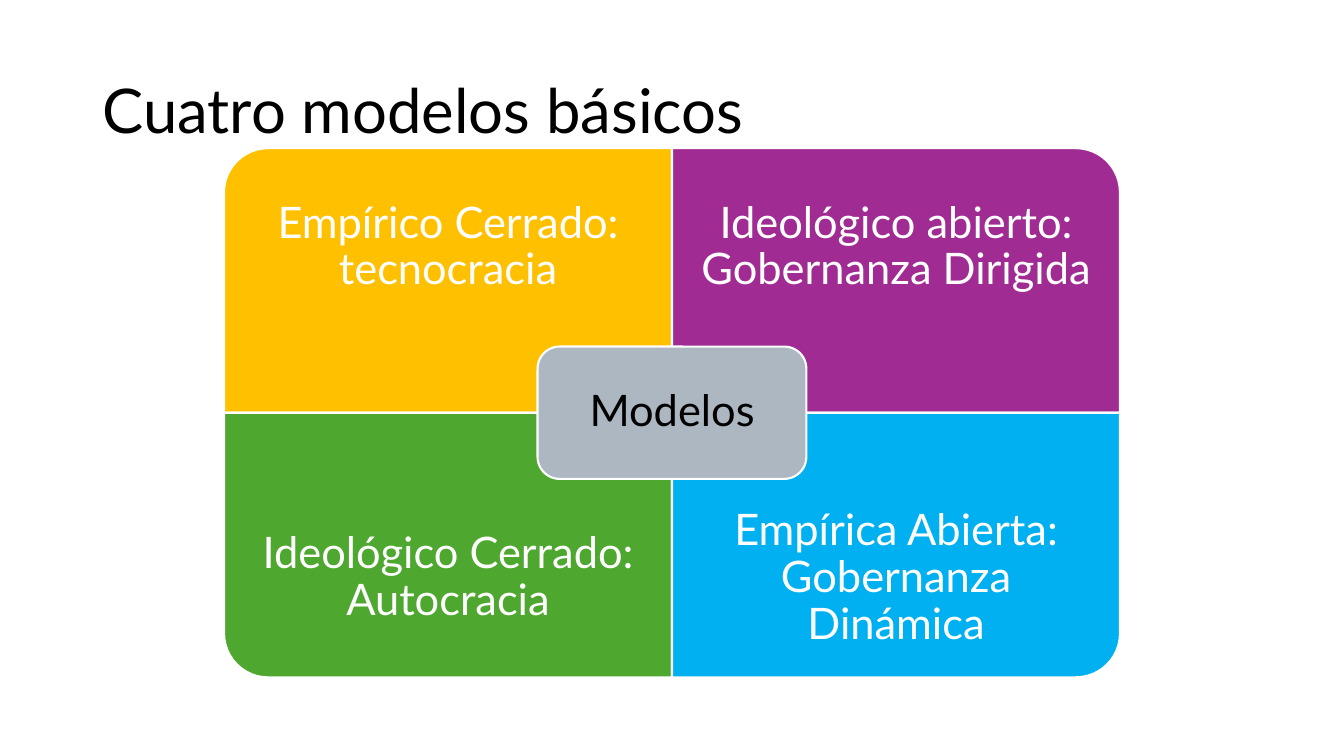
import pptx
import pptx.util
from pptx.dml.color import RGBColor
from pptx.enum.shapes import MSO_SHAPE
from pptx.enum.text import MSO_ANCHOR, PP_ALIGN

TITLE = "Cuatro modelos básicos"
HUB = "Modelos"
# column, row, rotation that turns the rounded corner outwards, colour, wording
MODELS = [
    (0, 0, 270, "FFC000", "Empírico Cerrado: tecnocracia"),
    (1, 0, 0, "A02B93", "Ideológico abierto: Gobernanza Dirigida"),
    (0, 1, 180, "4EA72E", "Ideológico Cerrado: Autocracia"),
    (1, 1, 90, "00B0F0", "Empírica Abierta: Gobernanza Dinámica"),
]
THEME = {
    "font": "Lato", "title_size": 44, "label_size": 31,
    "dark": "000000", "light": "FFFFFF", "hub": "ACB7C1", "border": 1.5,
}

SLIDE_W, SLIDE_H = 13.33, 7.5
CELL_W, CELL_H = SLIDE_W / 3, SLIDE_H * 0.35
GRID_LEFT, GRID_TOP = SLIDE_W / 6, 1.47
LABEL_H = CELL_H * 0.75
HUB_W, HUB_H = CELL_W * 0.6, CELL_H / 2
HUB_EDGE = 0.06


def inches(*lengths):
    return [pptx.util.Inches(length) for length in lengths]


def add_panel(slide, preset, box, fill, rotation=0):
    """Add a bordered panel covering box, which is measured after rotation."""
    left, top, width, height = box
    if rotation % 180:
        shift = (width - height) / 2
        left, top, width, height = left + shift, top - shift, height, width
    panel = slide.shapes.add_shape(preset, *inches(left, top, width, height))
    panel.rotation = rotation
    panel.shadow.inherit = False
    panel.fill.solid()
    panel.fill.fore_color.rgb = RGBColor.from_string(fill)
    panel.line.color.rgb = RGBColor.from_string(THEME["light"])
    panel.line.width = pptx.util.Pt(THEME["border"])


def add_label(slide, box, wording, size, color, margins, align=PP_ALIGN.CENTER):
    frame = slide.shapes.add_textbox(*inches(*box)).text_frame
    frame.word_wrap = True
    frame.vertical_anchor = MSO_ANCHOR.MIDDLE
    side, end = inches(*margins)
    frame.margin_left = frame.margin_right = side
    frame.margin_top = frame.margin_bottom = end
    frame.text = wording
    paragraph = frame.paragraphs[0]
    paragraph.alignment = align
    paragraph.line_spacing = 0.9
    font = paragraph.runs[0].font
    font.name = THEME["font"]
    font.size = pptx.util.Pt(size)
    font.color.rgb = RGBColor.from_string(color)


def main():
    deck = pptx.Presentation()
    deck.slide_width, deck.slide_height = inches(SLIDE_W, SLIDE_H)
    slide = deck.slides.add_slide(deck.slide_layouts[6])

    add_label(slide, (0.92, 0.4, 11.5, 1.45), TITLE, THEME["title_size"],
              THEME["dark"], (0.1, 0.05), PP_ALIGN.LEFT)

    for column, row, rotation, fill, wording in MODELS:
        left = GRID_LEFT + column * CELL_W
        top = GRID_TOP + row * CELL_H
        add_panel(slide, MSO_SHAPE.ROUND_1_RECTANGLE,
                  (left, top, CELL_W, CELL_H), fill, rotation)
        label_top = top + row * (CELL_H - LABEL_H)
        add_label(slide, (left, label_top, CELL_W, LABEL_H), wording,
                  THEME["label_size"], THEME["light"], (0.24, 0.24))

    hub_left = GRID_LEFT + CELL_W - HUB_W / 2
    hub_top = GRID_TOP + CELL_H - HUB_H / 2
    add_panel(slide, MSO_SHAPE.ROUNDED_RECTANGLE,
              (hub_left, hub_top, HUB_W, HUB_H), THEME["hub"])
    add_label(slide, (hub_left + HUB_EDGE, hub_top + HUB_EDGE,
                      HUB_W - 2 * HUB_EDGE, HUB_H - 2 * HUB_EDGE),
              HUB, THEME["label_size"], THEME["dark"], (0.13, 0.13))

    deck.save("out.pptx")


if __name__ == "__main__":
    main()
